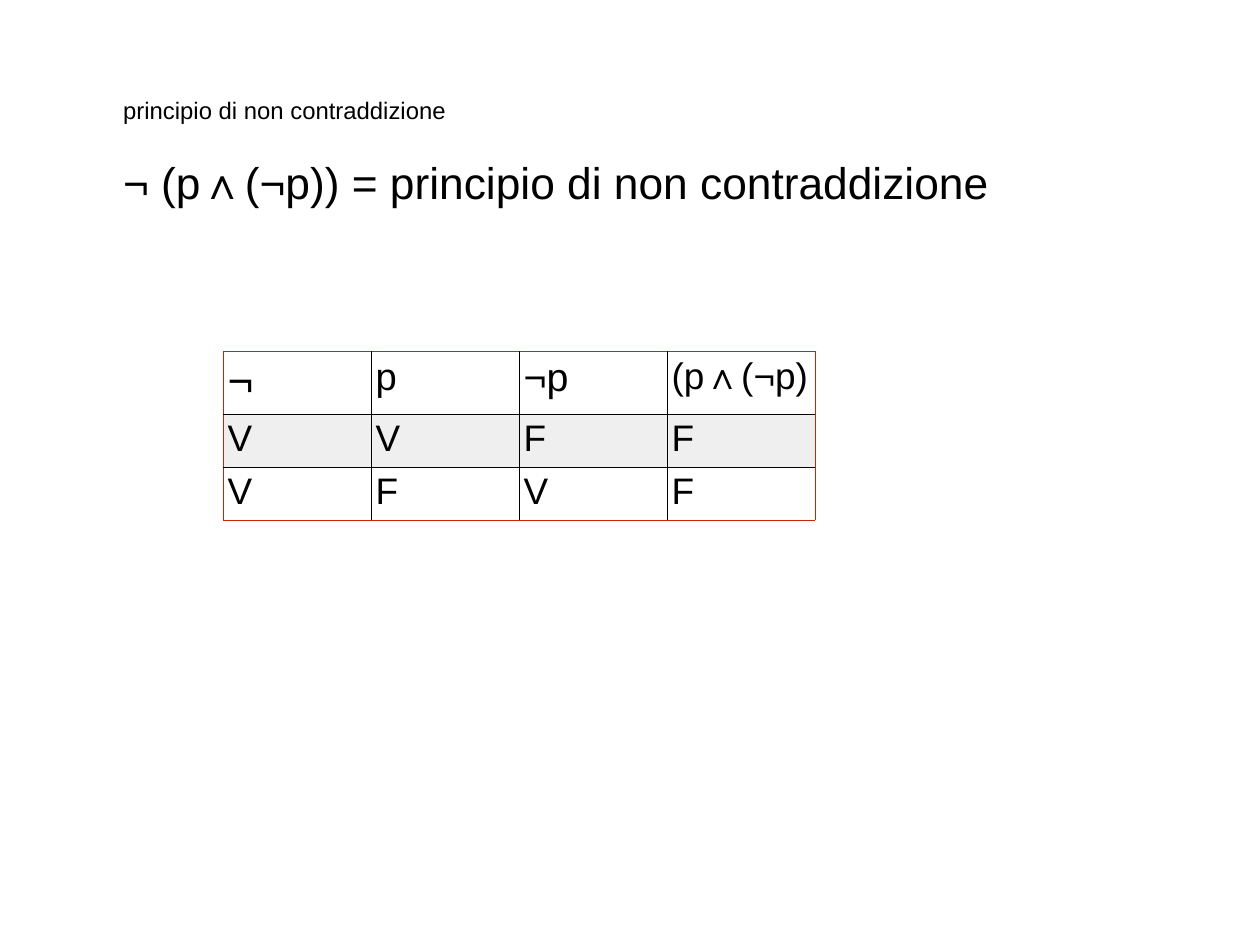
from lxml import etree
from pptx import Presentation
from pptx.dml.color import RGBColor
from pptx.enum.text import MSO_ANCHOR, MSO_AUTO_SIZE, PP_ALIGN
from pptx.oxml.ns import qn
from pptx.util import Inches, Pt

COLORS = {"text": "000000", "grid": "000000", "frame": "C82506", "band": "EFEFEF"}
ROWS = [
    ["¬", "p", "¬p", "(p∧(¬p)"],
    ["V", "V", "F", "F"],
    ["V", "F", "V", "F"],
]
HEADER_SIZES = [36, 31, 32, 30]
VALUE_SIZE = 30


def write_text(frame, text, size, inset):
    frame.margin_left = frame.margin_right = Inches(inset)
    frame.margin_top = frame.margin_bottom = Inches(inset)
    frame.word_wrap = True
    paragraph = frame.paragraphs[0]
    paragraph.text = text
    paragraph.alignment = PP_ALIGN.LEFT
    paragraph.font.name = "Arial"
    paragraph.font.size = Pt(size)
    paragraph.font.color.rgb = RGBColor.from_string(COLORS["text"])


def add_border(cell_properties, side, color):
    line = etree.SubElement(cell_properties, qn(f"a:{side}"), w=str(Pt(0.25)))
    fill = etree.SubElement(line, qn("a:solidFill"))
    etree.SubElement(fill, qn("a:srgbClr"), val=color)


presentation = Presentation()
presentation.slide_width = Inches(14.22)
presentation.slide_height = Inches(10.67)
slide = presentation.slides.add_slide(presentation.slide_layouts[5])

title = slide.shapes.title
title.left, title.top = Inches(1.39), Inches(0.6)
title.width, title.height = Inches(11.44), Inches(0.8)
title.text_frame.auto_size = MSO_AUTO_SIZE.NONE
title.text_frame.vertical_anchor = MSO_ANCHOR.BOTTOM
write_text(title.text_frame, "principio di non contraddizione", 19.4, 0)

formula = slide.shapes.add_textbox(Inches(1.39), Inches(1.75), Inches(11.44), Inches(7.44))
write_text(formula.text_frame, "¬ (p∧(¬p)) = principio di non contraddizione", 36, 0)

row_count, column_count = len(ROWS), len(ROWS[0])
truth_table = slide.shapes.add_table(
    row_count, column_count, Inches(2.52), Inches(3.97), Inches(6.68), Inches(0.9)
).table

for row, values in enumerate(ROWS):
    for column, value in enumerate(values):
        cell = truth_table.cell(row, column)
        size = HEADER_SIZES[column] if row == 0 else VALUE_SIZE
        write_text(cell.text_frame, value, size, 0)
        cell.text_frame.paragraphs[0].font.bold = False
        cell.margin_left = cell.margin_right = Inches(0.05)
        cell.margin_top = cell.margin_bottom = Inches(0.05)

        # Borders must come before the fill in the cell properties
        on_frame = {
            "lnL": column == 0,
            "lnR": column == column_count - 1,
            "lnT": row == 0,
            "lnB": row == row_count - 1,
        }
        for side, outer in on_frame.items():
            add_border(cell._tc.get_or_add_tcPr(), side, COLORS["frame" if outer else "grid"])
        if row == 1:
            cell.fill.solid()
            cell.fill.fore_color.rgb = RGBColor.from_string(COLORS["band"])
        else:
            cell.fill.background()

presentation.save("out.pptx")
